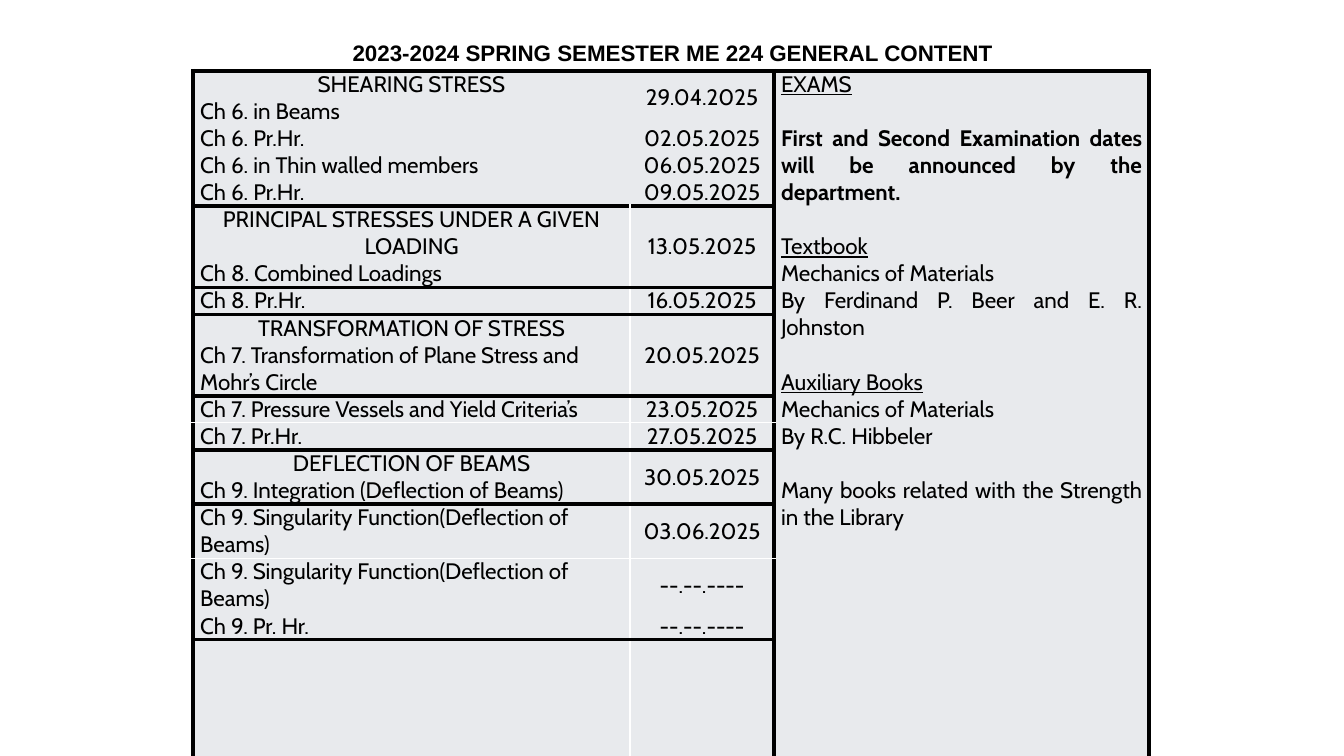
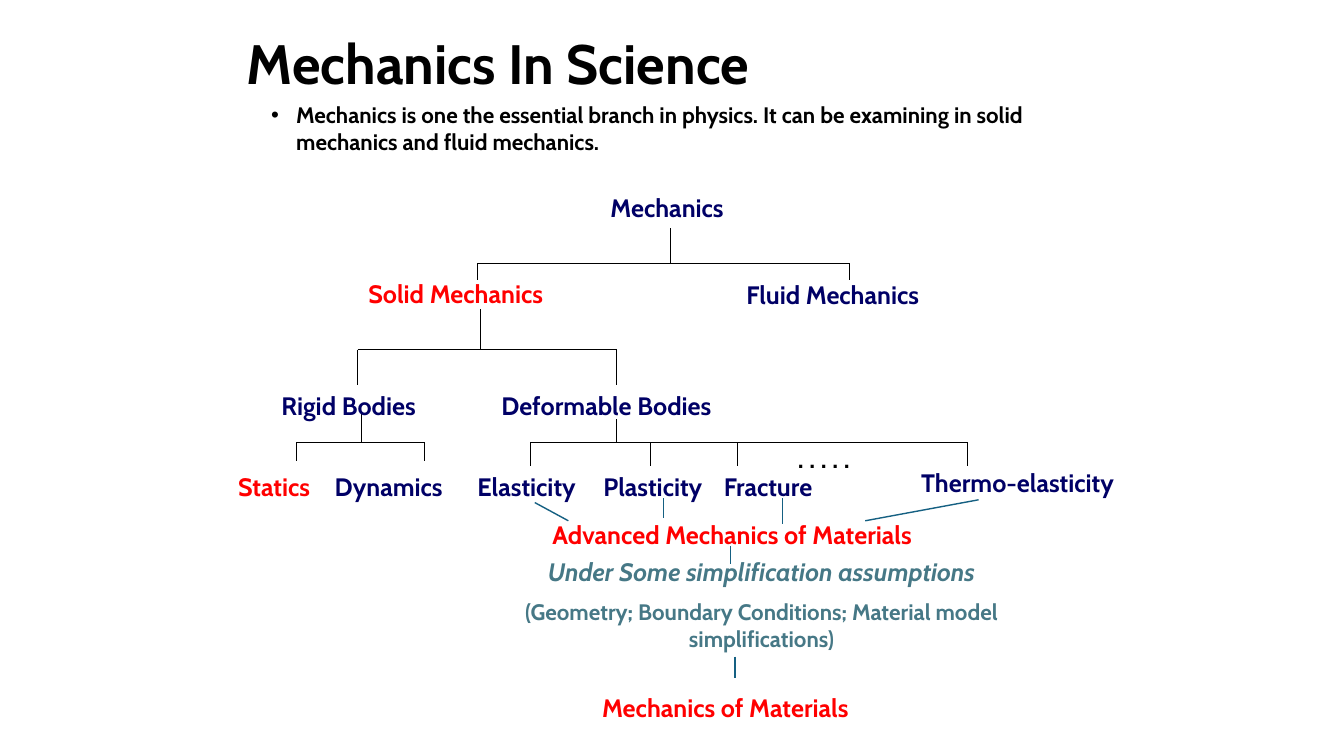
from dataclasses import dataclass
from typing import NamedTuple

from lxml.etree import SubElement
from pptx import Presentation
from pptx.dml.color import RGBColor as Rgb
from pptx.enum.shapes import MSO_CONNECTOR as Connector
from pptx.enum.text import MSO_ANCHOR as Anchor, MSO_AUTO_SIZE as AutoSize, PP_ALIGN as Align
from pptx.oxml.ns import qn
from pptx.util import Pt


@dataclass(frozen=True)
class Theme:
    """Colours, fonts and type sizes shared by the slides."""
    black: str = "000000"
    white: str = "FFFFFF"
    navy: str = "000066"
    red: str = "FF0000"
    slate: str = "467886"
    teal: str = "156082"
    cell: str = "E8EAED"
    body_font: str = "Cabin"
    banner_font: str = "Arial"
    title_size: float = 39.6
    node_size: float = 18
    body_size: float = 16


THEME = Theme()
HEAVY = (THEME.black, 3)
THIN = (THEME.white, 1)
LINE_HEIGHT = 19


class Box(NamedTuple):
    """A region in points."""
    left: float
    top: float
    width: float
    height: float

    def inner(self, left, top, width, height):
        """Return a box placed relative to this one."""
        return Box(self.left + left, self.top + top, width, height)

    def lengths(self):
        """Return the four sides as lengths."""
        return [Pt(value) for value in self]


SCHEDULE = [
    ("SHEARING STRESS", "Ch 6. in Beams", "29.04.2025", 2, None),
    (None, "Ch 6. Pr.Hr.", "02.05.2025", 1, None),
    (None, "Ch 6. in Thin walled members", "06.05.2025", 1, None),
    (None, "Ch 6. Pr.Hr.", "09.05.2025", 1, HEAVY),
    ("PRINCIPAL STRESSES UNDER A GIVEN LOADING", "Ch 8. Combined Loadings", "13.05.2025", 3, HEAVY),
    (None, "Ch 8. Pr.Hr.", "16.05.2025", 1, HEAVY),
    ("TRANSFORMATION OF STRESS", "Ch 7. Transformation of Plane Stress and Mohr’s Circle",
     "20.05.2025", 3, HEAVY),
    (None, "Ch 7. Pressure Vessels and Yield Criteria’s", "23.05.2025", 1, THIN),
    (None, "Ch 7. Pr.Hr.", "27.05.2025", 1, HEAVY),
    ("DEFLECTION OF BEAMS", "Ch 9. Integration (Deflection of Beams)", "30.05.2025", 2, HEAVY),
    (None, "Ch 9. Singularity Function(Deflection of Beams)", "03.06.2025", 2, THIN),
    (None, "Ch 9. Singularity Function(Deflection of Beams)", "--.--.----", 2, None),
    (None, "Ch 9. Pr. Hr.", "--.--.----", 1, HEAVY),
    (None, "", "", 4.4, None),
]
UNRULED_ROWS = 4

UNDERLINED = {"underline": True}
GAP = {"space_before": Pt(19.4)}
COURSE_NOTES = [
    ("EXAMS", UNDERLINED, {}),
    ("First and Second Examination dates will be announced by the department.", {"bold": True}, GAP),
    ("Textbook", UNDERLINED, GAP),
    ("Mechanics of Materials", {}, {}),
    ("By Ferdinand P. Beer and E. R. Johnston", {}, {}),
    ("Auxiliary Books", UNDERLINED, GAP),
    ("Mechanics of Materials", {}, {}),
    ("By R.C. Hibbeler", {}, {}),
    ("Many books related with the Strength in the Library", {}, GAP),
]

BRANCHES = [
    (319, 33, 58, (181, 447), 70),
    (183.5, 91, 120, (95.5, 280.5), 145),
    (98, 166, 186, (52, 143), 199),
    (280.5, 169.5, 186, (219, 304.5, 366.5, 531), 203),
]
PADDED_NODES = [
    ("Mechanics", (224, 4, 185, 33), THEME.navy, Align.CENTER),
    ("Solid Mechanics", (96, 65, 171, 29), THEME.red, Align.LEFT),
    ("Fluid Mechanics", (366, 66, 166, 29), THEME.navy, Align.LEFT),
    ("Rigid Bodies", (34, 145, 128, 29), THEME.navy, Align.LEFT),
    ("Deformable Bodies", (191, 145, 185, 29), THEME.navy, Align.LEFT),
    ("Statics", (3, 203, 83, 29), THEME.red, Align.LEFT),
    ("Dynamics", (72, 203, 109, 29), THEME.navy, Align.LEFT),
    ("Advanced Mechanics of Materials", (199, 237.5, 328, 29), THEME.red, Align.CENTER),
    ("Mechanics of Materials", (263, 361, 208, 29), THEME.red, Align.LEFT),
]
FLUSH_NODES = [
    ("Elasticity", (181, 207, 95, 22), THEME.navy, Align.LEFT),
    ("Plasticity", (271, 207, 86, 22), THEME.navy, Align.LEFT),
    ("Fracture", (357, 207, 81, 22), THEME.navy, Align.LEFT),
    ("Thermo-elasticity", (498, 204, 158, 22), THEME.navy, Align.LEFT),
    (". . . . .", (410, 187, 62, 22), THEME.black, Align.LEFT),
]
MERGING_LINKS = [
    (222, 229, 246, 242), (314, 226, 314, 240), (399, 226, 399, 244),
    (539, 227, 458, 242), (362, 260, 362, 273), (365, 339, 365, 354),
]
NO_MARGINS = dict.fromkeys(("margin_left", "margin_top", "margin_right", "margin_bottom"), 0)
CELL_MARGINS = {**NO_MARGINS, "margin_left": Pt(5), "margin_right": Pt(5)}


def apply(target, formats):
    """Set each attribute named in the dict."""
    for attribute, value in formats.items():
        setattr(target, attribute, value)


def write(frame, lines, color=THEME.black, **paragraph_format):
    """Fill a text frame with (text, font format, paragraph format) lines."""
    base_font = {"name": THEME.body_font, "size": Pt(THEME.body_size), "bold": False}
    for index, (text, font_format, own_format) in enumerate(lines):
        paragraph = frame.paragraphs[0] if index == 0 else frame.add_paragraph()
        apply(paragraph, {**paragraph_format, **own_format})
        run = paragraph.add_run()
        run.text = text
        apply(run.font, {**base_font, **font_format})
        run.font.color.rgb = Rgb.from_string(color)


def add_title(slide, box, text, font_format, wrap=True, **paragraph_format):
    """Move and format the title placeholder."""
    title = slide.shapes.title
    apply(title, dict(zip(("left", "top", "width", "height"), box.lengths())))
    apply(title.text_frame, {"word_wrap": wrap, "auto_size": AutoSize.NONE,
                             "vertical_anchor": Anchor.MIDDLE})
    write(title.text_frame, [(text, {"bold": True, **font_format}, {})], **paragraph_format)


def add_text(slide, box, lines, frame_format, **line_format):
    """Add a wrapping text box and return its frame."""
    frame = slide.shapes.add_textbox(*box.lengths()).text_frame
    apply(frame, {"word_wrap": True, **frame_format})
    write(frame, lines, **line_format)
    return frame


def add_line(slide, box, start_x, start_y, end_x, end_y, color, width):
    """Draw a straight line between two points relative to the box."""
    ends = (box.left + start_x, box.top + start_y, box.left + end_x, box.top + end_y)
    connector = slide.shapes.add_connector(Connector.STRAIGHT, *[Pt(end) for end in ends])
    connector.line.color.rgb = Rgb.from_string(color)
    connector.line.width = Pt(width)
    SubElement(connector.element.spPr, qn("a:effectLst"))


def format_cell(cell, left, right, top, bottom):
    """Give a cell its margins, borders and fill."""
    apply(cell, CELL_MARGINS)
    properties = cell._tc.get_or_add_tcPr()
    for side, rule in zip("LRTB", (left, right, top, bottom)):
        border = SubElement(properties, qn(f"a:ln{side}"))
        if rule is None:
            SubElement(border, qn("a:noFill"))
            continue
        color, width = rule
        border.set("w", str(int(Pt(width))))
        SubElement(SubElement(border, qn("a:solidFill")), qn("a:srgbClr")).set("val", color)
    cell.fill.solid()
    cell.fill.fore_color.rgb = Rgb.from_string(THEME.cell)


def add_schedule(slide, box):
    """Place the course calendar and notes as one table."""
    table = slide.shapes.add_table(len(SCHEDULE), 3, *box.lengths()).table
    apply(table, {"first_row": False, "horz_banding": False})
    for column, share in zip(table.columns, (0.457, 0.151, 0.392)):
        column.width = Pt(round(box.width * share))
    rule_above = HEAVY
    for index, (heading, topic, date, line_count, rule_below) in enumerate(SCHEDULE):
        table.rows[index].height = Pt(line_count * LINE_HEIGHT)
        topic_cell, date_cell, notes_cell = table.rows[index].cells
        divider = None if index < UNRULED_ROWS else THIN
        format_cell(topic_cell, HEAVY, divider, rule_above, rule_below)
        format_cell(date_cell, divider, HEAVY, rule_above, rule_below)
        format_cell(notes_cell, HEAVY, HEAVY, HEAVY if index == 0 else None, None)
        rule_above = rule_below
        if topic:
            headings = [(heading, {}, {"alignment": Align.CENTER})] if heading else []
            write(topic_cell.text_frame, headings + [(topic, {}, {})])
            write(date_cell.text_frame, [(date, {}, {})], alignment=Align.CENTER)
            apply(topic_cell, {"vertical_anchor": Anchor.MIDDLE})
            apply(date_cell, {"vertical_anchor": Anchor.MIDDLE})
    notes = table.cell(0, 2)
    notes.merge(table.cell(len(SCHEDULE) - 1, 2))
    write(notes.text_frame, COURSE_NOTES, alignment=Align.JUSTIFY)


def add_bullet(slide, box, text):
    """Place the bulleted introduction."""
    frame = add_text(slide, box, [(text, {"bold": True}, {})], {})
    properties = frame.paragraphs[0]._p.get_or_add_pPr()
    properties.set("marL", str(int(Pt(18))))
    properties.set("indent", str(int(Pt(-18))))
    SubElement(properties, qn("a:buFont")).set("typeface", "Arial")
    SubElement(properties, qn("a:buChar")).set("char", "•")


def add_branch(slide, box, stem_x, stem_y, bar_y, child_xs, child_y):
    """Draw a stem, a crossbar and a drop to each child."""
    segments = [(stem_x, stem_y, stem_x, bar_y), (child_xs[0], bar_y, child_xs[-1], bar_y)]
    segments += [(x, bar_y, x, child_y) for x in child_xs]
    for segment in segments:
        add_line(slide, box, *segment, THEME.black, 0.75)


def add_tree(slide, box):
    """Place the tree of mechanics fields and the links below it."""
    node_font = {"size": Pt(THEME.node_size), "bold": True}
    for branch in BRANCHES:
        add_branch(slide, box, *branch)
    for nodes, margins in ((PADDED_NODES, {}), (FLUSH_NODES, NO_MARGINS)):
        for text, place, color, alignment in nodes:
            add_text(slide, box.inner(*place), [(text, node_font, {})], margins,
                     color=color, alignment=alignment)
    assumptions = [
        ("Under Some simplification assumptions", {**node_font, "italic": True}, {}),
        ("(Geometry; Boundary Conditions; Material model simplifications)", {"bold": True},
         {"space_before": Pt(8)}),
    ]
    add_text(slide, box.inner(193, 267.5, 382, 103), assumptions, NO_MARGINS,
             color=THEME.slate, alignment=Align.CENTER)
    for link in MERGING_LINKS:
        add_line(slide, box, *link, THEME.teal, 1)


def build_content_slide(slide):
    """Build the semester content slide."""
    add_title(slide, Box(242, 24, 477, 27), "2023-2024 SPRING SEMESTER ME 224 GENERAL CONTENT",
              {"name": THEME.banner_font, "size": Pt(THEME.body_size)},
              wrap=False, alignment=Align.CENTER)
    add_schedule(slide, Box(138, 50.5, 683, 489))


def build_mechanics_slide(slide):
    """Build the slide on the branches of mechanics."""
    add_title(slide, Box(169, 29, 621, 37), "Mechanics In Science",
              {"size": Pt(THEME.title_size)}, alignment=Align.LEFT, line_spacing=0.9)
    add_bullet(slide, Box(186.5, 69, 599, 46),
               "Mechanics is one the essential branch in physics. "
               "It can be examining in solid mechanics and fluid mechanics.")
    add_tree(slide, Box(160, 130, 656, 391))


def main():
    """Build and save the presentation."""
    deck = Presentation()
    apply(deck, {"slide_width": Pt(960), "slide_height": Pt(540)})
    title_only = deck.slide_layouts[5]
    for build in (build_content_slide, build_mechanics_slide):
        build(deck.slides.add_slide(title_only))
    deck.save("out.pptx")


if __name__ == "__main__":
    main()
